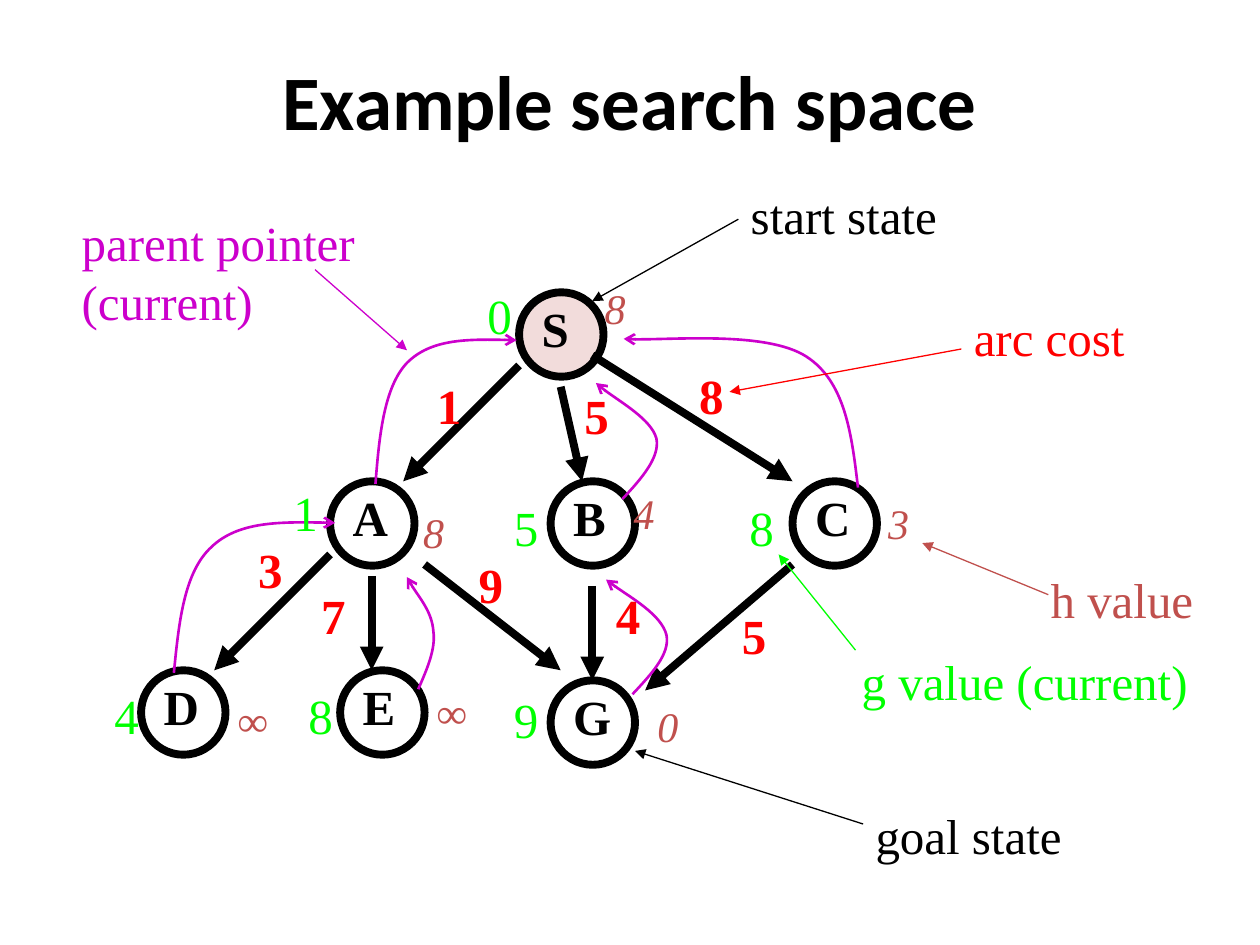
import pptx
import pptx.util
import pptx.dml.color
import pptx.enum.shapes
import pptx.enum.text
import pptx.oxml
import pptx.oxml.ns

HUES = {"black": "000000", "red": "FF0000", "brick": "C0504D",
        "green": "00FF00", "purple": "CC00CC", "pink": "F2DCDB"}
SERIF = "Times New Roman"
TITLE = "Example search space"
SIDE = 0.67

NODES = [
    ("S", 4.12, 2.32, 0.42, "pink"),
    ("C", 6.29, 3.82, 0.48, None),
    ("B", 4.37, 3.82, 0.46, None),
    ("A", 2.62, 3.82, 0.48, None),
    ("D", 1.12, 5.32, 0.48, None),
    ("G", 4.37, 5.4, 0.5, None),
    ("E", 2.7, 5.32, 0.46, None),
]
ARCS = [
    ((4.12, 2.9), (3.2, 3.82)), ((2.95, 4.57), (2.95, 5.32)),
    ((3.37, 4.48), (4.45, 5.32)), ((4.45, 3.07), (4.62, 3.82)),
    ((4.7, 2.82), (6.29, 3.82)), ((4.7, 4.65), (4.7, 5.4)),
    ((6.29, 4.48), (5.12, 5.48)), ((2.62, 4.4), (1.7, 5.32)),
]
COSTS = [("1", 3.37, 2.93), ("5", 4.54, 3.01), ("8", 5.45, 2.85),
         ("9", 3.7, 4.35), ("4", 4.79, 4.6), ("5", 5.79, 4.76),
         ("3", 1.95, 4.23), ("7", 2.45, 4.6)]
H_VALS = [("8", 4.7, 2.19), ("8", 3.26, 3.97), ("4", 4.93, 3.82),
          ("3", 6.95, 3.9), ("∞", 3.37, 5.4), ("∞", 1.79, 5.46),
          ("0", 5.12, 5.51)]
G_VALS = [("0", 3.77, 2.22), ("1", 2.23, 3.78), ("4", 0.81, 5.39),
          ("8", 2.35, 5.39), ("9", 3.98, 5.42), ("8", 5.85, 3.9),
          ("5", 3.98, 3.9)]
NOTES = [
    ("start state", 5.86, 1.42, 1.69, "black", (5.86, 1.74), (4.7, 2.39)),
    ("goal state", 6.85, 6.34, 1.69, "black", (6.85, 6.54), (5.04, 5.96)),
    ("arc cost", 7.63, 2.39, 1.41, "red", (7.63, 2.77), (5.79, 3.11)),
    ("h value", 8.24, 4.47, 1.34, "brick", (8.32, 4.72), (7.32, 4.31)),
    ("parent pointer\n(current)", 0.55, 1.64, 2.39, "purple", (2.5, 2.14), (3.23, 2.78)),
    ("g value (current)", 6.74, 5.12, 2.82, "green", (6.79, 5.16), (6.18, 4.4)),
]
CURVES = [
    [(2.98, 3.84), (3.01, 3.45), (3.05, 3.07), (3.23, 2.88),
     (3.42, 2.69), (3.76, 2.69), (4.1, 2.7)],
    [(1.38, 5.34), (1.42, 4.94), (1.46, 4.54), (1.68, 4.34),
     (1.89, 4.14), (2.27, 4.14), (2.66, 4.15)],
    [(3.32, 5.47), (3.39, 5.31), (3.46, 5.15), (3.44, 5.01),
     (3.43, 4.86), (3.26, 4.65), (3.23, 4.58)],
    [(5.02, 5.51), (5.17, 5.35), (5.32, 5.19), (5.29, 5.04),
     (5.25, 4.88), (4.89, 4.67), (4.81, 4.6)],
    [(4.94, 3.96), (5.09, 3.8), (5.24, 3.63), (5.21, 3.48),
     (5.17, 3.33), (4.81, 3.12), (4.73, 3.04)],
    [(6.81, 3.87), (6.76, 3.45), (6.71, 3.03), (6.4, 2.83),
     (6.09, 2.63), (5.2, 2.71), (4.95, 2.69)],
]


def inches(*nums):
    return [pptx.util.Inches(num) for num in nums]


def paint(hue):
    return pptx.dml.color.RGBColor.from_string(HUES[hue])


def make(tag):
    return pptx.oxml.parse_xml(f"<{tag} {pptx.oxml.ns.nsdecls('a')}/>")


def style(font, size, hue, face=SERIF, bold=False, slant=False):
    font.name, font.size = face, pptx.util.Pt(size)
    font.bold, font.italic = bold, slant
    font.color.rgb = paint(hue)


def write(slide, text, x, y, wide, hue, size=28, **looks):
    lines = text.count("\n") + 1
    tall = size / 60 * lines + 0.1
    box = slide.shapes.add_textbox(*inches(x, y, wide, tall))
    frame = box.text_frame
    frame.word_wrap = False
    frame.auto_size = pptx.enum.text.MSO_AUTO_SIZE.SHAPE_TO_FIT_TEXT
    para = frame.paragraphs[0]
    para.text = text
    style(para.font, size, hue, **looks)


def stroke(line, hue, width, head=None):
    line.color.rgb = paint(hue)
    line.width = pptx.util.Pt(width)
    if head:
        tail = make("a:tailEnd")
        tail.set("type", head)
        line._get_or_add_ln().append(tail)


def arrow(slide, start, end, hue, width):
    kind = pptx.enum.shapes.MSO_CONNECTOR.STRAIGHT
    link = slide.shapes.add_connector(kind, *inches(*start, *end))
    stroke(link.line, hue, width, "triangle")
    link._element.spPr.append(make("a:effectLst"))


def node(slide, name, x, y, wide, fill):
    kind = pptx.enum.shapes.MSO_SHAPE.OVAL
    ring = slide.shapes.add_shape(kind, *inches(x, y, SIDE, SIDE))
    ring.shadow.inherit = False
    if fill:
        ring.fill.solid()
        ring.fill.fore_color.rgb = paint(fill)
    else:
        ring.fill.background()
    stroke(ring.line, "black", 4.5)
    write(slide, name, x + 0.08, y, wide, "black", bold=True)


def curve(slide, points):
    spots = [inches(*point) for point in points]
    pen = slide.shapes.build_freeform(*spots[0])
    pen.add_line_segments(spots[1:], close=False)
    bend = pen.convert_to_shape()
    bend.shadow.inherit = False
    bend.fill.background()
    stroke(bend.line, "purple", 1.5, "arrow")
    legs = list(bend._element.iter(pptx.oxml.ns.qn("a:lnTo")))
    for first in range(0, len(legs), 3):
        cubic = make("a:cubicBezTo")
        legs[first].addprevious(cubic)
        for leg in legs[first:first + 3]:
            cubic.append(leg[0])
            leg.getparent().remove(leg)


def main():
    deck = pptx.Presentation()
    deck.slide_width, deck.slide_height = inches(10, 7.5)
    slide = deck.slides.add_slide(deck.slide_layouts[5])
    title = slide.shapes.title
    title.left, title.top, title.width, title.height = inches(0.75, 0.17, 8.5, 1.25)
    title.text_frame.text = TITLE
    style(title.text_frame.paragraphs[0].font, 44, "black", "Calibri", bold=True)

    for row in NODES:
        node(slide, *row)
    for start, end in ARCS:
        arrow(slide, start, end, "black", 4.5)
    for text, x, y in COSTS:
        write(slide, text, x, y, 0.4, "red", bold=True)
    for text, x, y in H_VALS:
        wide = 0.44 if text == "∞" else 0.37
        write(slide, text, x, y, wide, "brick", 24, slant=True)
    for points in CURVES:
        curve(slide, points)
    for text, x, y in G_VALS:
        write(slide, text, x, y, 0.4, "green")
    for text, x, y, wide, hue, start, end in NOTES:
        write(slide, text, x, y, wide, hue)
        arrow(slide, start, end, hue, 0.75)
    deck.save("out.pptx")


if __name__ == "__main__":
    main()
